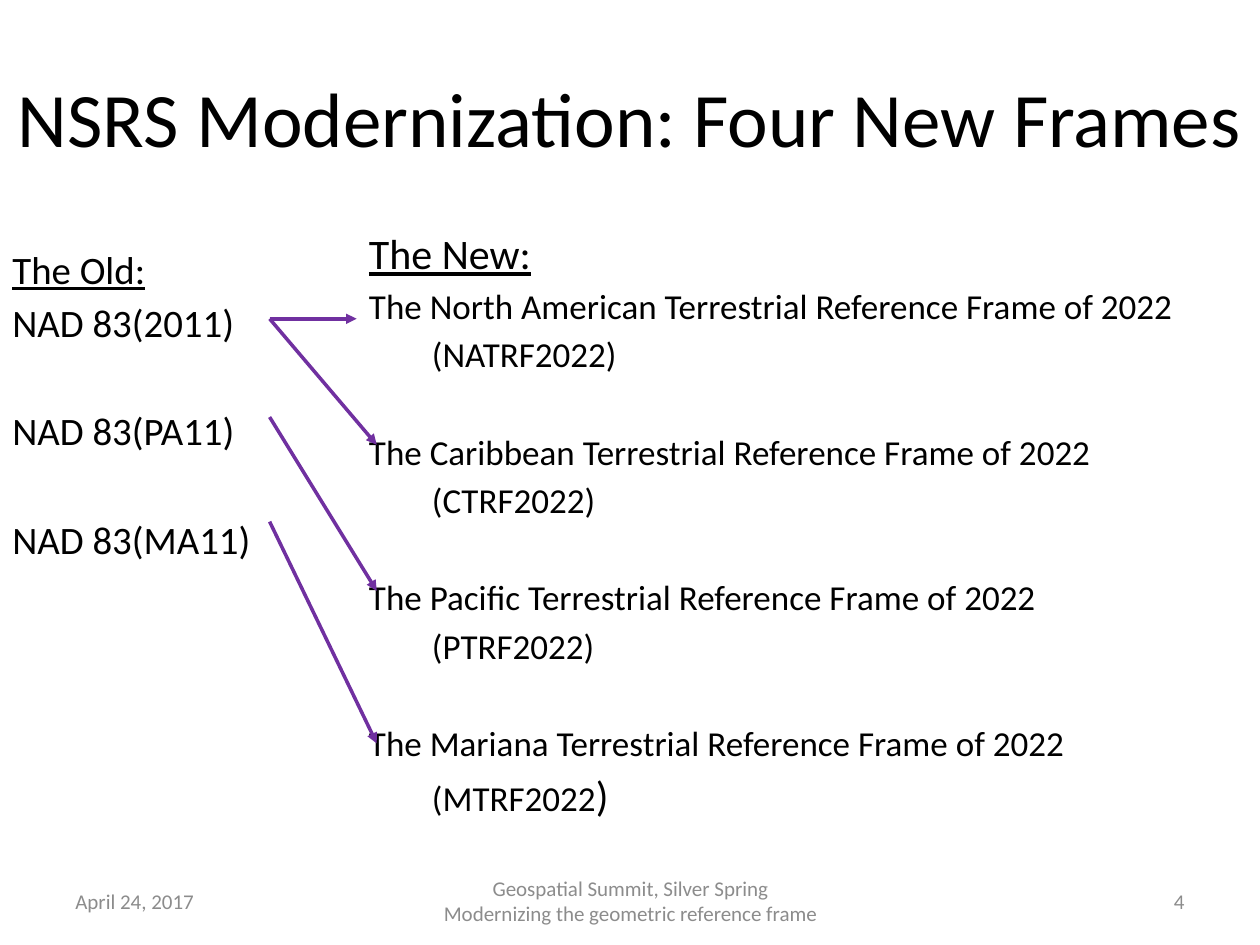
from pptx import Presentation
from pptx.dml.color import RGBColor
from pptx.enum import shapes, text
from pptx.oxml.ns import qn
from pptx.util import Inches, Pt
from lxml import etree

BLACK = RGBColor(0x00, 0x00, 0x00)
GRAY = RGBColor(0x8C, 0x8C, 0x8C)
PURPLE = RGBColor(0x70, 0x30, 0xA0)
LEFT, CENTER, RIGHT = text.PP_ALIGN.LEFT, text.PP_ALIGN.CENTER, text.PP_ALIGN.RIGHT
TOP, MIDDLE = text.MSO_ANCHOR.TOP, text.MSO_ANCHOR.MIDDLE

prs = Presentation()
prs.slide_width, prs.slide_height = Inches(10), Inches(7.5)
s = prs.slides.add_slide(prs.slide_layouts[6])


def add_text(box, lines, color=BLACK, align=LEFT, anchor=TOP):
    """Each line is (text, size, space before, underline)."""
    tf = s.shapes.add_textbox(*map(Inches, box)).text_frame
    tf.word_wrap = True
    tf.vertical_anchor = anchor
    for i, (words, size, before, underline) in enumerate(lines):
        p = tf.paragraphs[0] if i == 0 else tf.add_paragraph()
        p.alignment = align
        p.space_before = Pt(before)
        p.text = words
        fmt = {"name": "Calibri", "size": Pt(size), "underline": underline}
        for r in p.runs:
            for key, value in fmt.items():
                setattr(r.font, key, value)
            r.font.color.rgb = color
    return tf


# Title
add_text((0, 0.3, 10, 1.25), [("NSRS Modernization: Four New Frames", 44, 0, False)],
         align=CENTER, anchor=MIDDLE)

# Old frames
old = [("The Old:", 22.2, 0, True)]
for i, realization in enumerate(["2011", "PA11", "MA11"]):
    old.append((f"NAD 83({realization})", 22.2, 35.2 if i else 3.8, False))
add_text((0, 1.9, 2.99, 2.58), old)

# New frames, each with its abbreviation on a tabbed line
new = [("The New:", 24, 0, True)]
for i, region in enumerate(["North American", "Caribbean", "Pacific", "Mariana"]):
    abbr = "NA" if i == 0 else region[0]
    closing = "" if region == "Mariana" else ")"
    new.append((f"The {region} Terrestrial Reference Frame of 2022", 20,
                31.6 if i else 3.6, False))
    new.append((f"\t({abbr}TRF2022{closing}", 20, 3.6, False))
tf = add_text((2.83, 1.76, 6.92, 5.25), new)

# The last bracket is larger
r = tf.paragraphs[-1].add_run()
r.text = ")"
for key, value in {"name": "Calibri", "size": Pt(24)}.items():
    setattr(r.font, key, value)
r.font.color.rgb = BLACK

# Arrows from old to new frames
for y1, x2, y2 in [(2.53, 2.83, 2.53), (2.53, 2.99, 3.53),
                   (3.31, 2.99, 4.69), (4.14, 2.99, 5.9)]:
    sp = s.shapes.add_connector(shapes.MSO_CONNECTOR.STRAIGHT,
                                Inches(2.14), Inches(y1), Inches(x2), Inches(y2))
    sp.line.color.rgb = PURPLE
    sp.line.width = Pt(2)
    etree.SubElement(sp.line._get_or_add_ln(), qn("a:tailEnd"), type="triangle")
    etree.SubElement(sp._element.spPr, qn("a:effectLst"))

# Footer: date, event, slide number
for left, width, words, align in [
    (0.5, 2.33, "April 24, 2017", LEFT),
    (3.42, 3.17, "Geospatial Summit, Silver Spring\vModernizing the geometric reference frame", CENTER),
    (7.17, 2.33, "4", RIGHT),
]:
    add_text((left, 6.95, width, 0.4), [(words, 12, 0, False)], GRAY, align, MIDDLE)

prs.save("out.pptx")
